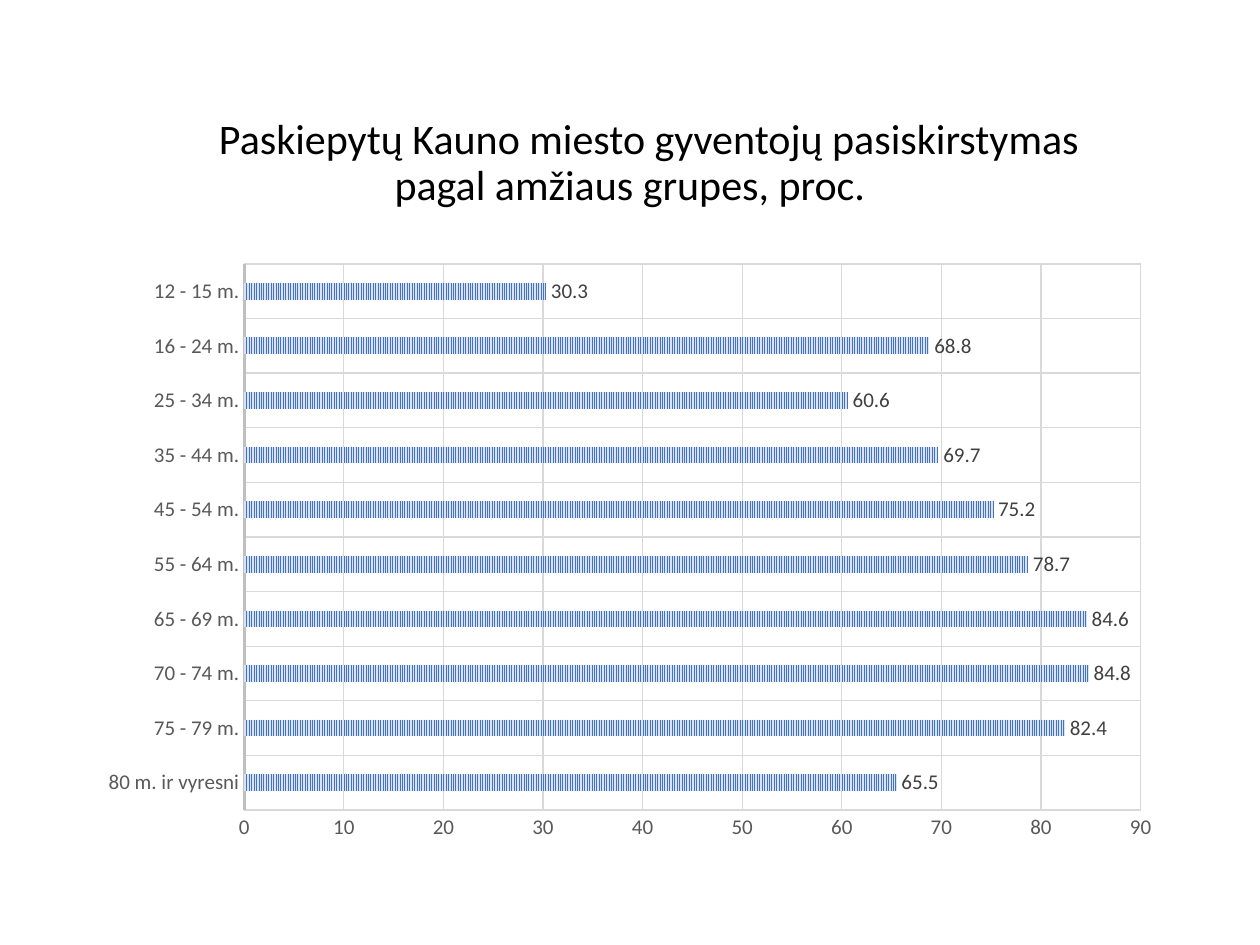
from dataclasses import dataclass

from pptx import Presentation
from pptx.chart.data import CategoryChartData
from pptx.dml.color import RGBColor
from pptx.enum.chart import XL_CHART_TYPE, XL_LABEL_POSITION, XL_TICK_MARK
from pptx.enum.dml import MSO_PATTERN
from pptx.enum.text import MSO_ANCHOR, MSO_AUTO_SIZE, PP_ALIGN
from pptx.util import Pt

TITLE_LINES = [
    "Paskiepytų Kauno miesto gyventojų pasiskirstymas",
    "pagal amžiaus grupes, proc.",
]
VACCINATED_BY_AGE = [
    ("80 m. ir vyresni", 65.5),
    ("75 - 79 m.", 82.4),
    ("70 - 74 m.", 84.8),
    ("65 - 69 m.", 84.6),
    ("55 - 64 m.", 78.7),
    ("45 - 54 m.", 75.2),
    ("35 - 44 m.", 69.7),
    ("25 - 34 m.", 60.6),
    ("16 - 24 m.", 68.8),
    ("12 - 15 m.", 30.3),
]


@dataclass(frozen=True)
class Theme:
    font: str = "Calibri"
    title_size: int = 24
    chart_size: int = 12
    title: str = "000000"
    axis_text: str = "595959"
    label_text: str = "404040"
    axis_line: str = "BFBFBF"
    grid: str = "D9D9D9"
    bar: str = "4472C4"
    bar_back: str = "DAE3F3"


THEME = Theme()
SLIDE_BOX = (1260, 945)
TITLE_BOX = (58, 50, 1144, 183)
TITLE_TOP_INSET = 51
TITLE_FIRST_LINE_INDENT = 38
CHART_BOX = (87, 252, 1086, 600)


def px(length):
    return round(length * 914400 / 126)


def style_font(font, size, color):
    font.name = THEME.font
    font.size = Pt(size)
    font.bold = False
    font.color.rgb = RGBColor.from_string(color)


def style_line(line, color, width):
    line.color.rgb = RGBColor.from_string(color)
    line.width = Pt(width)


def add_title(slide):
    title = slide.shapes.title
    title.left, title.top, title.width, title.height = map(px, TITLE_BOX)
    frame = title.text_frame
    frame.word_wrap = True
    frame.auto_size = MSO_AUTO_SIZE.NONE
    frame.vertical_anchor = MSO_ANCHOR.MIDDLE
    frame.margin_top = px(TITLE_TOP_INSET)
    paragraph = frame.paragraphs[0]
    paragraph.alignment = PP_ALIGN.CENTER
    paragraph.line_spacing = 0.9
    paragraph._p.get_or_add_pPr().set("indent", str(px(TITLE_FIRST_LINE_INDENT)))
    for index, line in enumerate(TITLE_LINES):
        if index:
            paragraph.add_line_break()
        run = paragraph.add_run()
        run.text = line
        style_font(run.font, THEME.title_size, THEME.title)


def style_axis(axis):
    axis.major_tick_mark = XL_TICK_MARK.NONE
    axis.minor_tick_mark = XL_TICK_MARK.NONE
    axis.has_major_gridlines = True
    style_line(axis.major_gridlines.format.line, THEME.grid, 0.75)
    style_font(axis.tick_labels.font, THEME.chart_size, THEME.axis_text)


def add_age_chart(slide):
    data = CategoryChartData()
    data.categories = [age for age, _ in VACCINATED_BY_AGE]
    data.add_series("Series 1", [share for _, share in VACCINATED_BY_AGE])
    chart = slide.shapes.add_chart(
        XL_CHART_TYPE.BAR_CLUSTERED, *map(px, CHART_BOX), data
    ).chart
    chart.has_title = False
    chart.has_legend = False
    style_font(chart.font, THEME.chart_size, THEME.axis_text)

    style_axis(chart.category_axis)
    style_line(chart.category_axis.format.line, THEME.axis_line, 1.5)
    style_axis(chart.value_axis)
    chart.value_axis.format.line.fill.background()
    chart.value_axis.minimum_scale = 0
    chart.value_axis.maximum_scale = 90
    chart.value_axis.major_unit = 10

    plot = chart.plots[0]
    plot.gap_width = 227
    plot.overlap = -48
    plot.vary_by_categories = False
    plot.has_data_labels = True
    labels = plot.data_labels
    labels.show_value = True
    labels.position = XL_LABEL_POSITION.OUTSIDE_END
    style_font(labels.font, THEME.chart_size, THEME.label_text)

    bars = plot.series[0].format
    bars.fill.patterned()
    bars.fill.pattern = MSO_PATTERN.NARROW_VERTICAL
    bars.fill.fore_color.rgb = RGBColor.from_string(THEME.bar)
    bars.fill.back_color.rgb = RGBColor.from_string(THEME.bar_back)
    bars.line.fill.background()


def main():
    presentation = Presentation()
    presentation.slide_width, presentation.slide_height = map(px, SLIDE_BOX)
    slide = presentation.slides.add_slide(presentation.slide_layouts[5])
    add_title(slide)
    add_age_chart(slide)
    presentation.save("out.pptx")


if __name__ == "__main__":
    main()
